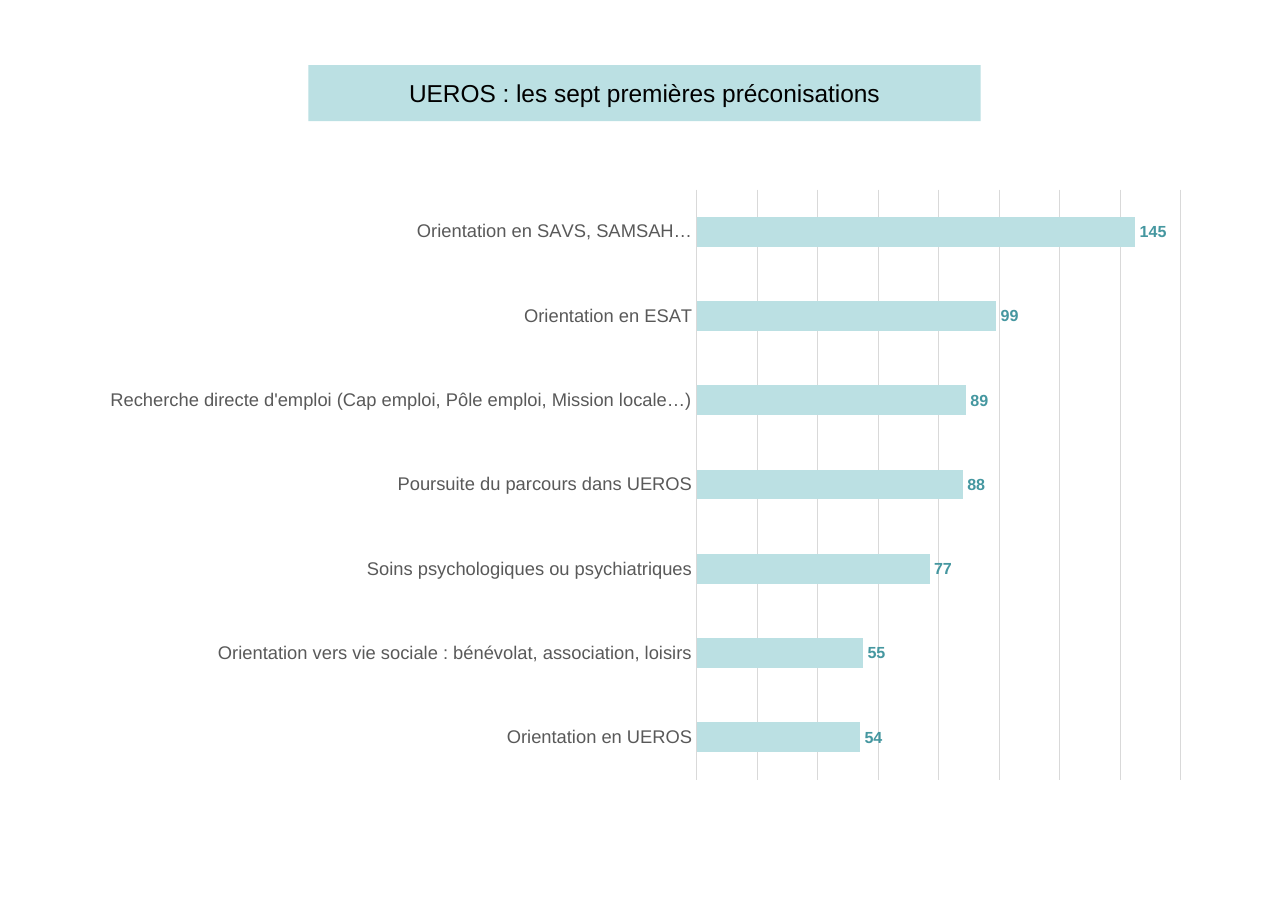
from typing import NamedTuple

from lxml.etree import SubElement
from pptx import Presentation
from pptx.chart.data import CategoryChartData
from pptx.dml.color import RGBColor
from pptx.enum.chart import XL_CHART_TYPE, XL_LABEL_POSITION, XL_TICK_MARK
from pptx.enum.text import MSO_ANCHOR, PP_ALIGN
from pptx.oxml.ns import qn
from pptx.util import Inches, Pt

FONT = "Arial"
TEAL, DARK_TEAL = "BBE0E3", "4597A0"
BLACK, GREY, LIGHT_GREY = "000000", "595959", "D9D9D9"


class Recommendation(NamedTuple):
    label: str
    count: int


RECOMMENDATIONS = [
    Recommendation("Orientation en SAVS, SAMSAH…", 145),
    Recommendation("Orientation en ESAT", 99),
    Recommendation("Recherche directe d'emploi (Cap emploi, Pôle emploi, Mission locale…)", 89),
    Recommendation("Poursuite du parcours dans UEROS", 88),
    Recommendation("Soins psychologiques ou psychiatriques", 77),
    Recommendation("Orientation vers vie sociale : bénévolat, association, loisirs", 55),
    Recommendation("Orientation en UEROS", 54),
]


def rgb(color: str) -> RGBColor:
    return RGBColor.from_string(color)


def set_font(font, size: float, color: str, bold: bool = False) -> None:
    font.name, font.size, font.bold = FONT, Pt(size), bold
    font.color.rgb = rgb(color)


def set_line(line, color: str) -> None:
    line.color.rgb = rgb(color)
    line.width = Pt(0.75)


def set_plot_area(chart, **fractions: float) -> None:
    """Place the inner plot area as fractions of the chart frame."""
    plot_area = chart.plots[0]._element.getparent()
    layout = plot_area.find(qn("c:layout"))
    if layout is None:
        layout = SubElement(plot_area, qn("c:layout"))
        plot_area.insert(0, layout)
    manual = SubElement(layout, qn("c:manualLayout"))
    settings = {"layoutTarget": "inner", "xMode": "edge", "yMode": "edge", **fractions}
    for tag, value in settings.items():
        SubElement(manual, qn(f"c:{tag}")).set("val", str(value))


def add_title(slide, text: str) -> None:
    sp = slide.shapes.title
    sp.left, sp.top, sp.width, sp.height = map(Inches, (2.8, 0.59, 6.1, 0.51))
    sp.fill.solid()
    sp.fill.fore_color.rgb = rgb(TEAL)
    tf = sp.text_frame
    tf.text = text
    tf.word_wrap = False
    tf.vertical_anchor = MSO_ANCHOR.MIDDLE
    p = tf.paragraphs[0]
    p.alignment = PP_ALIGN.CENTER
    set_font(p.runs[0].font, 16, BLACK)


def add_bar_chart(slide, items: list[Recommendation]) -> None:
    data = CategoryChartData(number_format="#,##0")
    data.categories = [item.label for item in items]
    data.add_series("Series 1", [item.count for item in items])
    frame = map(Inches, (0.81, 1.61, 10.12, 5.58))
    chart = slide.shapes.add_chart(XL_CHART_TYPE.BAR_CLUSTERED, *frame, data).chart
    chart.has_legend = chart.has_title = False
    set_font(chart.font, 10, BLACK)
    set_plot_area(chart, x=0.545, y=0.02, w=0.434, h=0.96)

    # Bars and their values
    plot = chart.plots[0]
    plot.gap_width = 182
    plot.vary_by_categories = False
    series = plot.series[0]
    series.format.fill.solid()
    series.format.fill.fore_color.rgb = rgb(TEAL)
    labels = series.data_labels
    labels.show_value = True
    labels.position = XL_LABEL_POSITION.OUTSIDE_END
    labels.number_format, labels.number_format_is_linked = "#,##0", False
    set_font(labels.font, 10.5, DARK_TEAL, bold=True)

    # Axes
    cat_axis, val_axis = chart.category_axis, chart.value_axis
    cat_axis.reverse_order = True
    cat_axis.major_tick_mark = XL_TICK_MARK.NONE
    set_font(cat_axis.tick_labels.font, 12, GREY)
    set_line(cat_axis.format.line, LIGHT_GREY)
    val_axis.minimum_scale, val_axis.maximum_scale, val_axis.major_unit = 0, 160, 20
    val_axis.has_major_gridlines = True
    set_line(val_axis.major_gridlines.format.line, LIGHT_GREY)
    val_axis.visible = False


def main() -> None:
    prs = Presentation()
    prs.slide_width, prs.slide_height = Inches(11.69), Inches(8.27)
    s = prs.slides.add_slide(prs.slide_layouts[5])
    add_bar_chart(s, RECOMMENDATIONS)
    add_title(s, "UEROS : les sept premières préconisations")
    prs.save("out.pptx")


if __name__ == "__main__":
    main()
